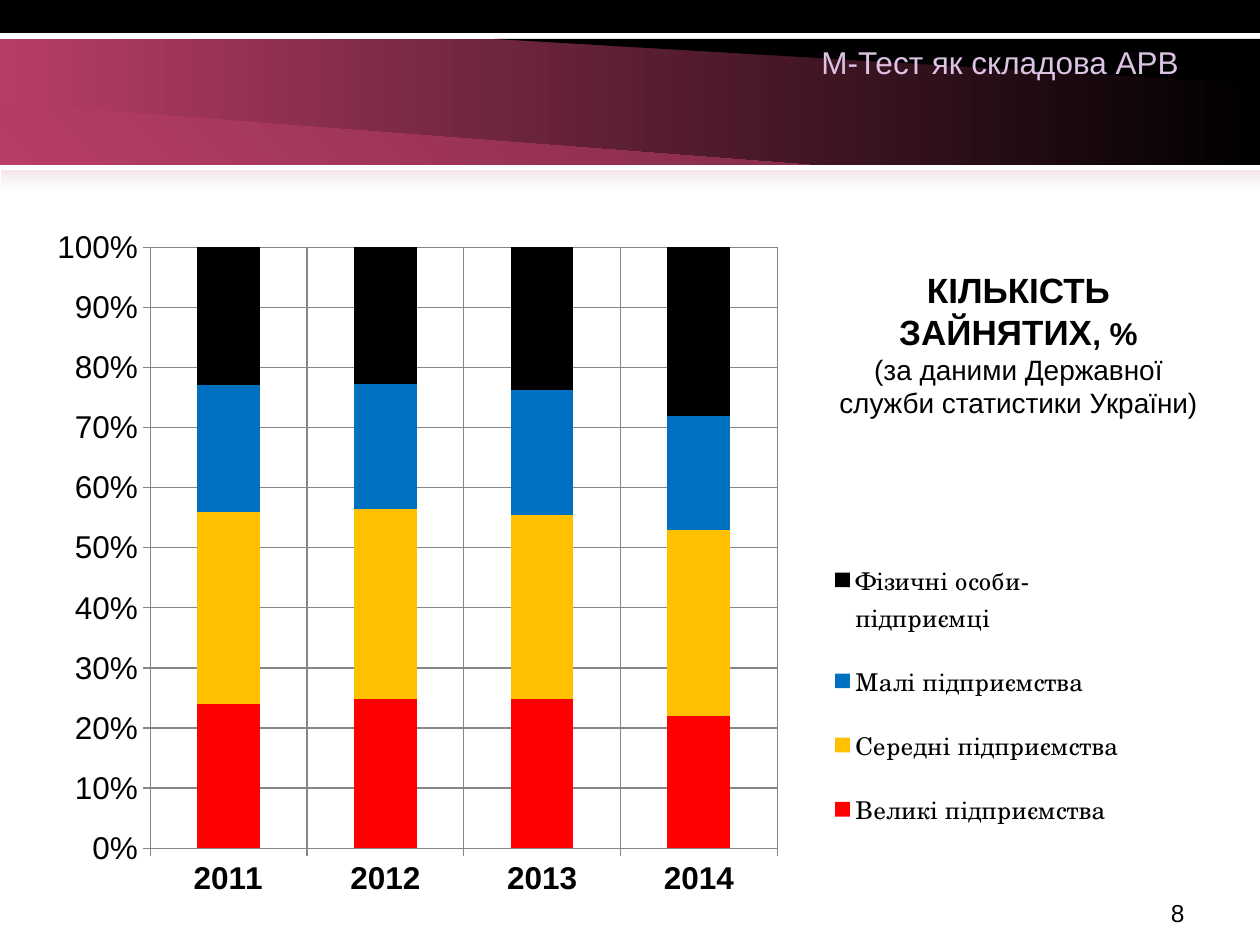
from lxml.etree import SubElement
from pptx import Presentation
from pptx.chart.data import CategoryChartData
from pptx.dml.color import RGBColor
from pptx.enum.chart import XL_CHART_TYPE, XL_LEGEND_POSITION, XL_TICK_MARK
from pptx.enum.shapes import MSO_SHAPE
from pptx.enum.text import MSO_AUTO_SIZE, PP_ALIGN
from pptx.oxml.ns import qn
from pptx.util import Emu, Pt

SCALE = 914400 / 126
COLORS = {
    "black": "000000", "white": "FFFFFF", "pink": "B83D68", "wine": "842C4A",
    "blush": "F4E7ED", "lilac": "DEC2E4", "grid": "868686",
    "large": "FF0000", "medium": "FFC000", "small": "0070C0",
}
YEARS = ["2011", "2012", "2013", "2014"]
SERIES = [
    ("Великі підприємства", "large", (24, 25, 25, 22)),
    ("Cередні підприємства", "medium", (32, 32, 31, 31)),
    ("Малі підприємства", "small", (21, 21, 21, 19)),
    ("Фізичні особи-підприємці", "black", (23, 23, 24, 28)),
]


def px(n):
    """Turn pixels into EMU."""
    return Emu(round(n * SCALE))


def rgb(name):
    """Look up a named colour."""
    return RGBColor.from_string(COLORS[name])


def paint(sp, colors, angle=0):
    """Fill a shape with one colour or a two-colour gradient, without outline."""
    sp.shadow.inherit = False
    sp.line.fill.background()
    if len(colors) == 1:
        sp.fill.solid()
        sp.fill.fore_color.rgb = rgb(colors[0])
        return
    sp.fill.gradient()
    sp.fill.gradient_angle = angle
    for stop, color, position in zip(sp.fill.gradient_stops, colors, (0, 1)):
        stop.color.rgb = rgb(color)
        stop.position = position


def add_rect(s, x, y, w, h, colors, angle=0):
    """Add a filled rectangle."""
    sp = s.shapes.add_shape(MSO_SHAPE.RECTANGLE, px(x), px(y), px(w), px(h))
    paint(sp, colors, angle)


def add_wedge(s, points, colors, angle=0):
    """Add a filled polygon."""
    builder = s.shapes.build_freeform(*points[0], scale=SCALE)
    builder.add_line_segments(points[1:], close=True)
    paint(builder.convert_to_shape(), colors, angle)


def add_banner(s, x, y, w, h):
    """Draw the black strip, the slanted gradient band and its soft reflection."""
    top, bottom, right = y + 39, y + h - 26, x + w
    add_rect(s, x, top, w, bottom - top, ["pink", "black"])
    add_wedge(s, [(x + 495, top), (right, top + 45), (right, top)], ["black"])
    add_wedge(s, [(x, bottom), (x + 810, bottom), (x, bottom - 62)], ["pink", "wine"], 45)
    add_rect(s, x, y, w, 33, ["black"])
    add_rect(s, x + 1, bottom + 5, w - 1, 21, ["blush", "white"], 270)


def add_text(s, x, y, w, h, paragraphs, align, color="black", wrap=True, grow=True):
    """Add a text box from paragraphs of (text, size, bold) runs."""
    tf = s.shapes.add_textbox(px(x), px(y), px(w), px(h)).text_frame
    tf.word_wrap = wrap
    tf.auto_size = MSO_AUTO_SIZE.SHAPE_TO_FIT_TEXT if grow else MSO_AUTO_SIZE.NONE
    for i, runs in enumerate(paragraphs):
        p = tf.add_paragraph() if i else tf.paragraphs[0]
        p.alignment = align
        for text, size, bold in runs:
            r = p.add_run()
            r.text = text
            r.font.name = "Arial"
            r.font.size = Pt(size)
            r.font.bold = bold
            r.font.color.rgb = rgb(color)


def set_layout(parent, layout, inner=False):
    """Write a manual layout of fractions into a chart part."""
    manual = SubElement(layout, qn("c:manualLayout"))
    fields = [("layoutTarget", "inner")] if inner else []
    fields += [("xMode", "edge"), ("yMode", "edge"), *zip("xywh", parent)]
    for tag, value in fields:
        SubElement(manual, qn(f"c:{tag}")).set("val", str(value))


def style_axis(axis, bold):
    """Give an axis its gridlines, crossing ticks and labels."""
    axis.has_major_gridlines = True
    axis.major_tick_mark = XL_TICK_MARK.OUTSIDE
    axis.minor_tick_mark = XL_TICK_MARK.NONE
    axis.tick_labels.font.size = Pt(18)
    axis.tick_labels.font.bold = bold
    for line in (axis.format.line, axis.major_gridlines.format.line):
        line.color.rgb = rgb("grid")
        line.width = Pt(0.75)


def add_employment_chart(s, x, y, w, h):
    """Add the stacked chart of employment shares with its legend."""
    data = CategoryChartData()
    data.categories = YEARS
    for name, _, values in SERIES:
        data.add_series(name, values)
    chart = s.shapes.add_chart(
        XL_CHART_TYPE.COLUMN_STACKED_100, px(x), px(y), px(w), px(h), data).chart
    chart.has_title = False
    chart.font.name = "Arial"
    chart.font.size = Pt(18)
    chart.font.color.rgb = rgb("black")
    plot = chart.plots[0]
    plot.gap_width = 150
    plot.overlap = 100
    plot.vary_by_categories = False
    for series, (_, color, _) in zip(plot.series, SERIES):
        series.format.fill.solid()
        series.format.fill.fore_color.rgb = rgb(color)
    style_axis(chart.category_axis, True)
    style_axis(chart.value_axis, False)
    chart.value_axis.minimum_scale = 0
    chart.value_axis.maximum_scale = 1
    chart.value_axis.major_unit = 0.1
    chart.value_axis.tick_labels.number_format = "0%"
    chart.value_axis.tick_labels.number_format_is_linked = False
    chart.has_legend = True
    legend = chart.legend
    legend.position = XL_LEGEND_POSITION.RIGHT
    legend.include_in_layout = False
    legend.font.name = "TeX Gyre Schola"
    legend.font.size = Pt(14)
    area = chart.element.find(".//" + qn("c:plotArea"))
    layout = area.find(qn("c:layout"))
    if layout is None:
        layout = area.makeelement(qn("c:layout"))
        area.insert(0, layout)
    set_layout((0.09, 0.04, 0.58, 0.88), layout, inner=True)
    box = chart.element.find(".//" + qn("c:legend"))
    layout = box.find(qn("c:layout"))
    if layout is None:
        layout = box.makeelement(qn("c:layout"))
        box.find(qn("c:legendPos")).addnext(layout)
    set_layout((0.72, 0.46, 0.27, 0.47), layout)


def main():
    """Build the slide and save it."""
    prs = Presentation()
    prs.slide_width, prs.slide_height = px(1260), px(945)
    s = prs.slides.add_slide(prs.slide_layouts[6])
    add_banner(s, 0, 0, 1260, 191)
    add_text(s, 903, 892, 294, 34, [[("8", 14, False)]], PP_ALIGN.RIGHT, grow=False)
    add_text(s, 809, 37, 387, 50, [[("М-Тест як складова АРВ", 18, False)]],
             PP_ALIGN.LEFT, "lilac", wrap=False)
    add_employment_chart(s, 53, 220, 1081, 683)
    add_text(s, 819, 262, 399, 165, [
        [("КІЛЬКІСТЬ ЗАЙНЯТИХ", 20, True), (", %", 18, True)],
        [("(за даними Державної служби статистики України)", 16, False)],
    ], PP_ALIGN.CENTER)
    prs.save("out.pptx")


if __name__ == "__main__":
    main()
